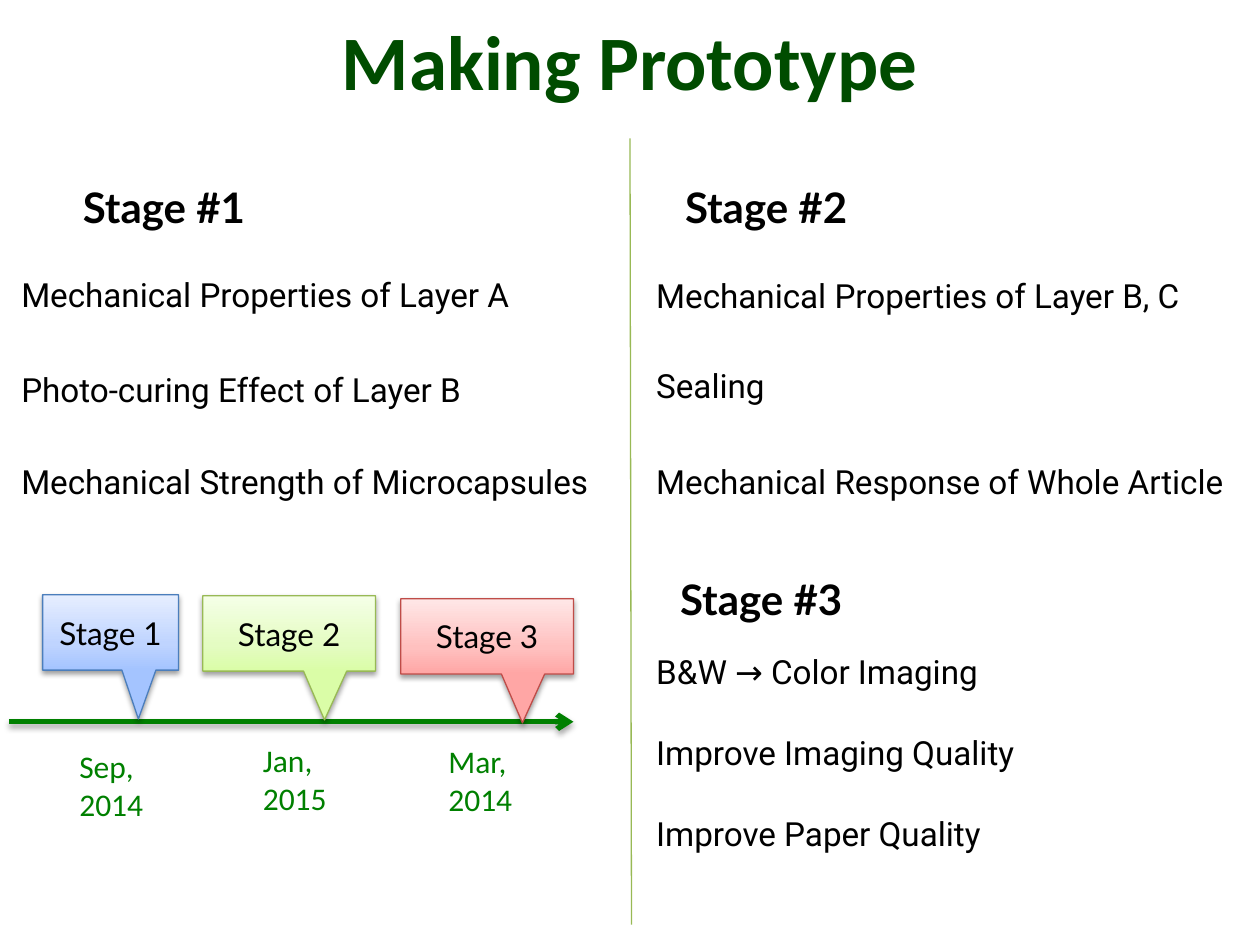
from copy import deepcopy

from lxml.etree import SubElement
from pptx import Presentation
from pptx.dml.color import RGBColor
from pptx.enum.shapes import MSO_CONNECTOR, MSO_SHAPE
from pptx.enum.text import MSO_ANCHOR, PP_ALIGN
from pptx.oxml.ns import qn
from pptx.util import Cm, Pt

COLORS = {
    "title": "004C00", "text": "000000", "timeline": "008000", "divider": "98B955",
}

# Content; all lengths in cm
TITLE = "Making Prototype"
HEADINGS = [  # text, left, top
    ("Stage #1", 1.42, 3.53),
    ("Stage #2", 13.56, 3.53),
    ("Stage #3", 13.46, 11.43),
]
TOPICS = [  # lines, left, top
    (["Mechanical Properties of Layer A"], 0.18, 5.41),
    (["Photo-curing Effect of Layer B"], 0.18, 7.32),
    (["Mechanical Strength of Microcapsules"], 0.18, 9.17),
    (["Mechanical Properties of Layer B, C"], 12.98, 5.43),
    (["Sealing"], 12.98, 7.24),
    (["Mechanical Response of Whole Article"], 12.98, 9.17),
    (["B&W → Color Imaging", "Improve Imaging Quality", "Improve Paper Quality"],
     12.98, 13.0),
]
MILESTONES = [  # label, left, top, width, gradient from bottom to top, outline
    ("Stage 1", 0.86, 11.99, 2.74, ("A4C4FF", "BFD4FF", "E6EEFF"), "4B7EBC"),
    ("Stage 2", 4.09, 12.01, 3.48, ("DAFDA7", "E4FCC2", "F5FFE7"), "98B955"),
    ("Stage 3", 8.08, 12.07, 3.48, ("FFA6A5", "FFC0BF", "FFE7E7"), "BF4C48"),
]
DATES = [  # month, year, left, top
    ("Sep,", "2014", 1.35, 14.94),
    ("Jan,", "2015", 5.05, 14.81),
    ("Mar,", "2014", 8.79, 14.83),
]
GRADIENT_STOPS = (0, 0.35, 1)
TOPIC_GAP = Pt(23.5)


def add_run(paragraph, text, font, size, color, bold=False):
    run = paragraph.add_run()
    run.text = text
    run.font.name, run.font.size, run.font.bold = font, Pt(size), bold
    run.font.color.rgb = RGBColor.from_string(COLORS[color])


def add_box(left, top, width, height):
    frame = slide.shapes.add_textbox(Cm(left), Cm(top), Cm(width), Cm(height)).text_frame
    frame.word_wrap = True
    return frame


def add_line(start, end, color, width):
    line = slide.shapes.add_connector(MSO_CONNECTOR.STRAIGHT, *map(Cm, start + end))
    line.line.color.rgb = RGBColor.from_string(COLORS[color])
    line.line.width = Pt(width)
    return line


def add_effects(shape, opacity=None):
    """Replace the theme shadow: a soft one below, or none without opacity."""
    effects = SubElement(shape._element.spPr, qn("a:effectLst"))
    if opacity:
        shadow = SubElement(effects, qn("a:outerShdw"), blurRad="40000", dist="22000",
                            dir="5400000", rotWithShape="0")
        black = SubElement(shadow, qn("a:srgbClr"), val="000000")
        SubElement(black, qn("a:alpha"), val=str(opacity * 1000))


def fill_gradient(fill, colors):
    fill.gradient()
    fill.gradient_angle = 90
    stop_list = fill._fill._gradFill.gsLst
    stop_list.insert(1, deepcopy(stop_list[0]))
    for stop, position, color in zip(fill.gradient_stops, GRADIENT_STOPS, colors):
        stop.position = position
        stop.color.rgb = RGBColor.from_string(color)


deck = Presentation()
deck.slide_width, deck.slide_height = Cm(25.4), Cm(19.05)
slide = deck.slides.add_slide(deck.slide_layouts[5])

# Title
title = slide.shapes.title
title.left, title.top, title.width, title.height = Cm(1.27), Cm(-0.38), Cm(22.86), Cm(3.18)
title.text_frame.vertical_anchor = MSO_ANCHOR.MIDDLE
title_line = title.text_frame.paragraphs[0]
title_line.alignment = PP_ALIGN.CENTER
add_run(title_line, TITLE, "Calibri", 44, "title", bold=True)

# Column divider
divider = add_line((12.7, 2.79), (12.73, 18.64), "divider", 0.75)
add_effects(divider)

# Stage headings and their topics
for text, left, top in HEADINGS:
    add_run(add_box(left, top, 5.03, 1.27).paragraphs[0], text, "Lato", 24, "text", bold=True)

for lines, left, top in TOPICS:
    topic = add_box(left, top, 12.4, 1.07 + 1.62 * (len(lines) - 1))
    for index, text in enumerate(lines):
        paragraph = topic.add_paragraph() if index else topic.paragraphs[0]
        if index:
            paragraph.space_before = TOPIC_GAP
        add_run(paragraph, text, "Roboto", 19, "text")

# Timeline arrow
timeline = add_line((0.18, 14.55), (11.56, 14.55), "timeline", 3)
SubElement(timeline.line._get_or_add_ln(), qn("a:tailEnd"), type="arrow")
add_effects(timeline, opacity=35)

# Milestone callouts
for label, left, top, width, gradient, outline in MILESTONES:
    callout = slide.shapes.add_shape(MSO_SHAPE.RECTANGULAR_CALLOUT,
                                     Cm(left), Cm(top), Cm(width), Cm(1.52))
    callout.adjustments[0], callout.adjustments[1] = 0.205, 1.148
    fill_gradient(callout.fill, gradient)
    callout.line.color.rgb = RGBColor.from_string(outline)
    callout.line.width = Pt(0.75)
    add_effects(callout, opacity=38)
    callout.text_frame.vertical_anchor = MSO_ANCHOR.MIDDLE
    label_line = callout.text_frame.paragraphs[0]
    label_line.alignment = PP_ALIGN.CENTER
    add_run(label_line, label, "Lato", 18, "text")

# Milestone dates
for month, year, left, top in DATES:
    date_line = add_box(left, top, 2.95, 1.8).paragraphs[0]
    add_run(date_line, month, "Calibri", 18, "timeline")
    date_line.add_line_break()
    add_run(date_line, year, "Calibri", 18, "timeline")

deck.save("out.pptx")
